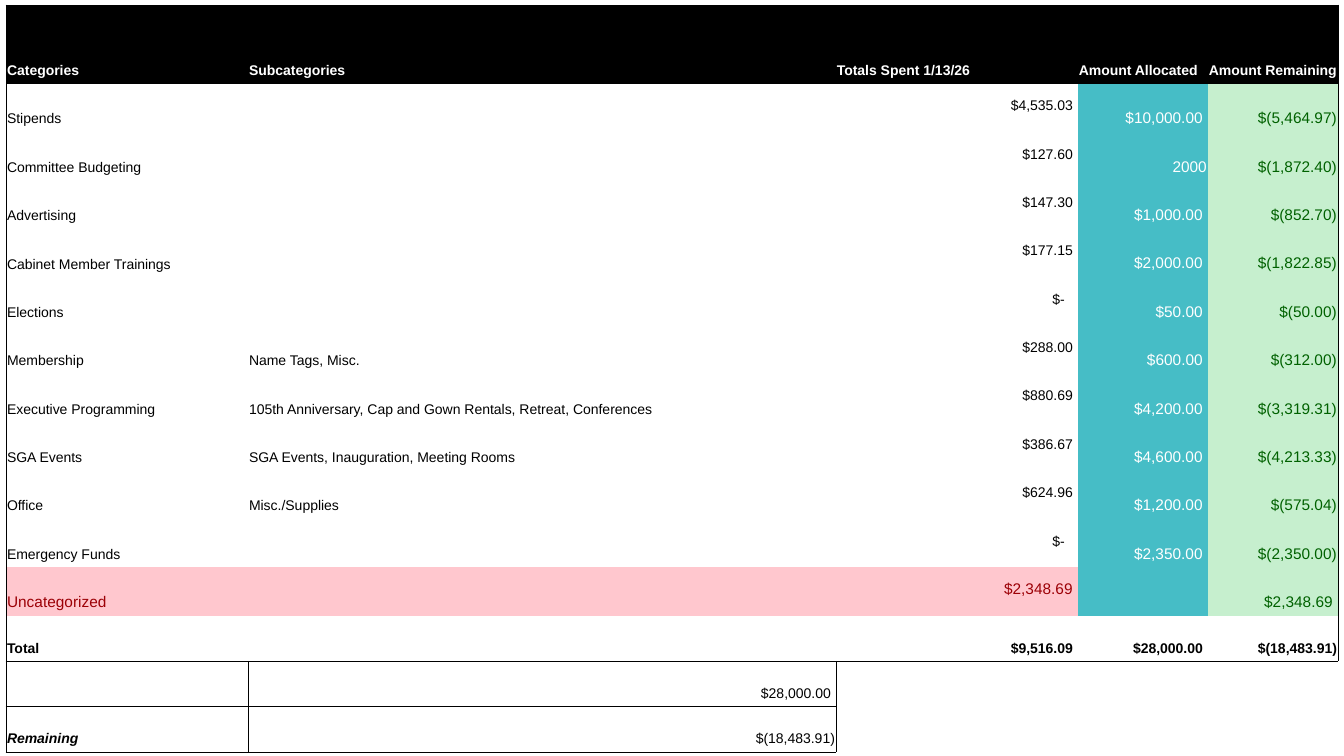
from lxml import etree
from pptx import Presentation
from pptx.dml.color import RGBColor
from pptx.enum.text import MSO_ANCHOR as Anchor, PP_ALIGN as Align
from pptx.oxml.ns import qn
from pptx.util import Inches, Pt

BLACK = RGBColor(0x00, 0x00, 0x00)
WHITE = RGBColor(0xFF, 0xFF, 0xFF)
TEAL = RGBColor(0x46, 0xBD, 0xC6)
GREEN = RGBColor(0xC6, 0xEF, 0xCE)
DARK_GREEN = RGBColor(0x00, 0x61, 0x00)
PINK = RGBColor(0xFF, 0xC7, 0xCE)
DARK_RED = RGBColor(0x9C, 0x00, 0x06)

COLUMN_WIDTHS = [2.4, 5.83, 2.4, 1.29, 1.29]
ROW_HEIGHTS = [0.78] + [0.48] * 11 + [0.45] * 3
BUDGET = [
    ("Categories", "Subcategories", "Totals Spent 1/13/26", "Amount Allocated", "Amount Remaining"),
    ("Stipends", "", "$4,535.03", "$10,000.00", "$(5,464.97)"),
    ("Committee Budgeting", "", "$127.60", "2000", "$(1,872.40)"),
    ("Advertising", "", "$147.30", "$1,000.00", "$(852.70)"),
    ("Cabinet Member Trainings", "", "$177.15", "$2,000.00", "$(1,822.85)"),
    ("Elections", "", "$-", "$50.00", "$(50.00)"),
    ("Membership", "Name Tags, Misc.", "$288.00", "$600.00", "$(312.00)"),
    ("Executive Programming", "105th Anniversary, Cap and Gown Rentals, Retreat, Conferences",
     "$880.69", "$4,200.00", "$(3,319.31)"),
    ("SGA Events", "SGA Events, Inauguration, Meeting Rooms", "$386.67", "$4,600.00", "$(4,213.33)"),
    ("Office", "Misc./Supplies", "$624.96", "$1,200.00", "$(575.04)"),
    ("Emergency Funds", "", "$-", "$2,350.00", "$(2,350.00)"),
    ("Uncategorized", "", "$2,348.69", "", "$2,348.69"),
    ("Total", "", "$9,516.09", "$28,000.00", "$(18,483.91)"),
    ("", "$28,000.00", "", "", ""),
    ("Remaining", "$(18,483.91)", "", "", ""),
]
UNCATEGORIZED, TOTAL, REMAINING = 11, 12, 14
SPENT, ALLOCATED, LEFT_OVER = 2, 3, 4


def cell_look(row, column):
    """Return the fill and the text format of one budget cell."""
    if row == 0:
        return BLACK, {"color": WHITE, "bold": True}
    if row >= TOTAL:
        return None, {"bold": row == TOTAL or column == 0,
                      "italic": row == REMAINING and column == 0}
    if column == ALLOCATED:
        return TEAL, {"color": WHITE, "size": 11}
    if column == LEFT_OVER:
        return GREEN, {"color": DARK_GREEN, "size": 11}
    if row == UNCATEGORIZED:
        return PINK, {"color": DARK_RED, "size": 11}
    return None, {}


def ruled_sides(row, column):
    """Return the sides of a cell that carry a black line."""
    if row > TOTAL:
        if column < SPENT:
            return "LRTB"
        return ("L" if column == SPENT else "") + ("T" if row == TOTAL + 1 else "")
    tests = {"L": column == 0, "R": column == LEFT_OVER, "T": row == 0, "B": row == TOTAL}
    return "".join(side for side, ruled in tests.items() if ruled)


def right_inset(text):
    """Keep room for a closing parenthesis, as accounting formats do."""
    if text == "$-":
        return 0.13
    return 0.05 if text.startswith("$") and not text.endswith(")") else 0.01


def write(cell, text, size=10, color=BLACK, bold=False, italic=False, align=Align.LEFT):
    para = cell.text_frame.paragraphs[0]
    para.alignment = align
    para.font.size = Pt(size)
    if text:
        span = para.add_run()
        span.text = text
        font = span.font
        font.name, font.size, font.bold, font.italic = "Arial", Pt(size), bold, italic
        font.color.rgb = color


class BudgetPage:
    def __init__(self, page, line_color=BLACK, line_width=0.5):
        self.page = page
        self.line_color = line_color
        self.line_width = Pt(line_width)

    def rule(self, cell, sides):
        properties = cell._tc.get_or_add_tcPr()
        for index, side in enumerate("LRTB"):
            line = etree.Element(qn(f"a:ln{side}"), w=str(self.line_width))
            if side in sides:
                fill = etree.SubElement(line, qn("a:solidFill"))
                etree.SubElement(fill, qn("a:srgbClr"), val=str(self.line_color))
            else:
                etree.SubElement(line, qn("a:noFill"))
            properties.insert(index, line)

    def cell(self, cell, text, row, column):
        fill, look = cell_look(row, column)
        if fill is None:
            cell.fill.background()
        else:
            cell.fill.solid()
            cell.fill.fore_color.rgb = fill
        is_amount = row > 0 and (column >= SPENT or row > TOTAL and column == 1)
        cell.margin_left = cell.margin_top = Inches(0.01)
        cell.margin_right = Inches(right_inset(text))
        cell.margin_bottom = Inches(0.05)
        centred = column == SPENT and 0 < row < TOTAL
        cell.vertical_anchor = Anchor.MIDDLE if centred else Anchor.BOTTOM
        write(cell, text, align=Align.RIGHT if is_amount else Align.LEFT, **look)
        self.rule(cell, ruled_sides(row, column))

    def table(self, rows, left, top):
        frame = self.page.shapes.add_table(
            len(rows), len(COLUMN_WIDTHS), Inches(left), Inches(top),
            Inches(sum(COLUMN_WIDTHS)), Inches(sum(ROW_HEIGHTS)))
        table = frame.table
        table.first_row = table.horz_banding = False
        for column, width in zip(table.columns, COLUMN_WIDTHS):
            column.width = Inches(width)
        for row, height in zip(table.rows, ROW_HEIGHTS):
            row.height = Inches(height)
        for row, texts in enumerate(rows):
            for column, text in enumerate(texts):
                self.cell(table.cell(row, column), text, row, column)


def main():
    deck = Presentation()
    deck.slide_width, deck.slide_height = Inches(13.33), Inches(7.5)
    blank = deck.slide_layouts[6]
    BudgetPage(deck.slides.add_slide(blank)).table(BUDGET, left=0.06, top=0.05)
    deck.save("out.pptx")


if __name__ == "__main__":
    main()
